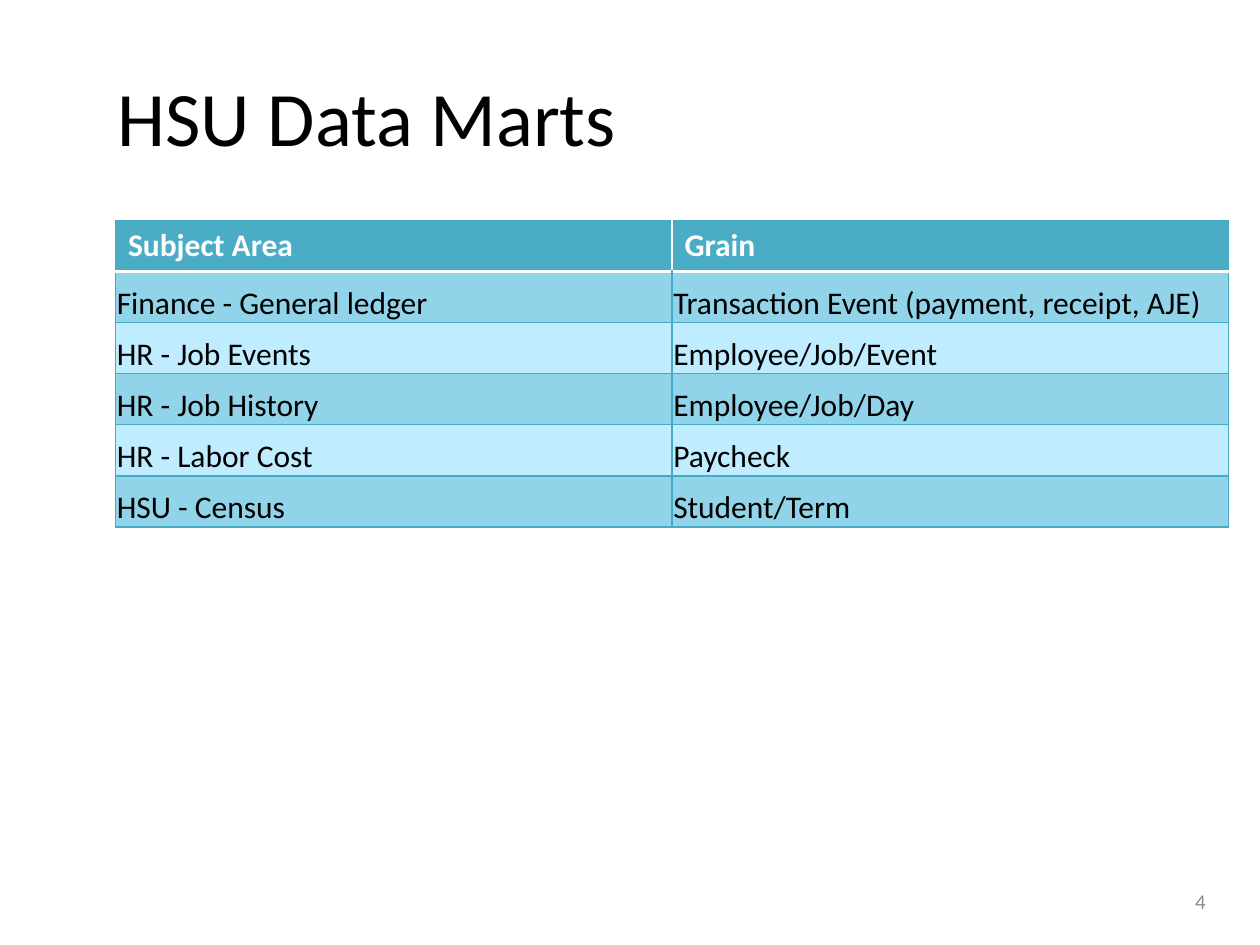
from lxml.etree import SubElement
from pptx import Presentation
from pptx.dml.color import RGBColor
from pptx.enum.text import MSO_ANCHOR, PP_ALIGN
from pptx.oxml.ns import qn
from pptx.util import Pt

# Content
TITLE = "HSU Data Marts"
SLIDE_NUMBER = "4"
DATA_MARTS = [
    ("Subject Area", "Grain"),
    ("Finance - General ledger", "Transaction Event (payment, receipt, AJE)"),
    ("HR - Job Events", "Employee/Job/Event"),
    ("HR - Job History", "Employee/Job/Day"),
    ("HR - Labor Cost", "Paycheck"),
    ("HSU - Census", "Student/Term"),
]

COLORS = {
    "text": "000000",
    "number": "8C8C8C",
    "white": "FFFFFF",
    "header": "4BACC6",
    "dark_band": "91D3E8",
    "light_band": "BFEDFF",
    "border": "46AAC5",
}
FONT = "Calibri"
TABLE_LEFT, TABLE_TOP, TABLE_WIDTH, ROW_HEIGHT = 66, 126, 636, 29.2
BODY_CELL = {
    "vertical_anchor": MSO_ANCHOR.BOTTOM,
    "margin_left": Pt(0.75),
    "margin_top": Pt(0.75),
    "margin_right": Pt(0.75),
    "margin_bottom": Pt(0),
}


def set_attributes(target, values):
    for name, value in values.items():
        setattr(target, name, value)


def write(text_frame, text, size, color, bold=False, alignment=PP_ALIGN.LEFT):
    paragraph = text_frame.paragraphs[0]
    paragraph.alignment = alignment
    run = paragraph.add_run()
    run.text = text
    set_attributes(run.font, {"name": FONT, "size": Pt(size), "bold": bold})
    run.font.color.rgb = RGBColor.from_string(COLORS[color])


def add_border(cell, side, color, width):
    properties = cell._tc.get_or_add_tcPr()
    line = SubElement(properties, qn(f"a:ln{side}"), w=str(Pt(width)))
    fill = SubElement(line, qn("a:solidFill"))
    SubElement(fill, qn("a:srgbClr"), val=COLORS[color])


def format_cell(cell, text, row, column):
    is_header = row == 0
    # Borders precede the fill in the cell's XML
    for side in "LRTB":
        inner = (side, column) in (("R", 0), ("L", 1))
        if is_header and inner:
            continue
        under_header = (side, row) in (("B", 0), ("T", 1))
        add_border(cell, side, *(("white", 2) if under_header else ("border", 0.75)))
    band = "header" if is_header else "dark_band" if row % 2 else "light_band"
    cell.fill.solid()
    cell.fill.fore_color.rgb = RGBColor.from_string(COLORS[band])
    if not is_header:
        set_attributes(cell, BODY_CELL)
    write(cell.text_frame, text, 18, "white" if is_header else "text", is_header)


presentation = Presentation()
set_attributes(presentation, {"slide_width": Pt(720), "slide_height": Pt(540)})
slide = presentation.slides.add_slide(presentation.slide_layouts[5])

# Title
title = slide.shapes.title
set_attributes(title, {"left": Pt(60), "top": Pt(21), "width": Pt(636), "height": Pt(90)})
title.text_frame.vertical_anchor = MSO_ANCHOR.MIDDLE
write(title.text_frame, TITLE, 44, "text")

# Table of data marts
row_count, column_count = len(DATA_MARTS), len(DATA_MARTS[0])
table = slide.shapes.add_table(
    row_count, column_count, Pt(TABLE_LEFT), Pt(TABLE_TOP),
    Pt(TABLE_WIDTH), Pt(ROW_HEIGHT * row_count),
).table
for table_row in table.rows:
    table_row.height = Pt(ROW_HEIGHT)
for row, texts in enumerate(DATA_MARTS):
    for column, text in enumerate(texts):
        format_cell(table.cell(row, column), text, row, column)

# Slide number
number = slide.shapes.add_textbox(Pt(528), Pt(500.5), Pt(168), Pt(28.75))
set_attributes(number.text_frame, {"word_wrap": True, "vertical_anchor": MSO_ANCHOR.MIDDLE})
write(number.text_frame, SLIDE_NUMBER, 12, "number", alignment=PP_ALIGN.RIGHT)

presentation.save("out.pptx")
